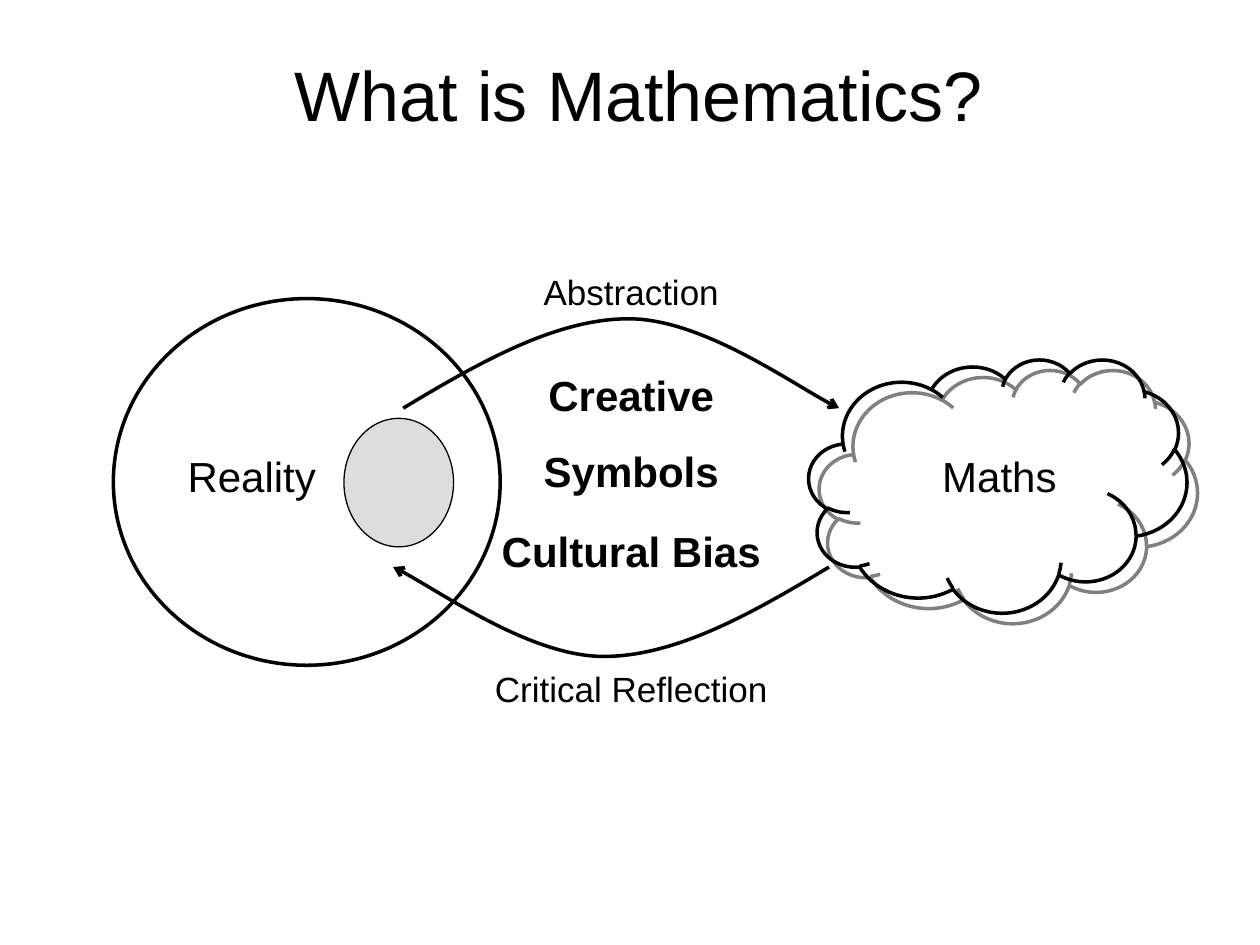
"""Build the slide that links reality and maths by abstraction and reflection."""
from lxml import etree
from pptx import Presentation
from pptx.dml.color import RGBColor
from pptx.enum.shapes import MSO_SHAPE
from pptx.enum.text import PP_ALIGN
from pptx.oxml.ns import qn
from pptx.util import Inches, Pt

OVAL, CLOUD = MSO_SHAPE.OVAL, MSO_SHAPE.CLOUD
LEFT, CENTER = PP_ALIGN.LEFT, PP_ALIGN.CENTER
BLACK = RGBColor(0x00, 0x00, 0x00)
LIGHT_GREY = RGBColor(0xDD, 0xDD, 0xDD)
SHADOW_GREY = RGBColor(0x80, 0x80, 0x80)

COLUMNS, ROWS = 100, 75
CELL = Inches(0.1)
LABEL_COLUMN, LABEL_WIDTH = 32.75, 34.7
ARC = [(0, 7.1), (6, 3.5), (12.1, 0), (17.9, 0), (23.6, 0), (31.8, 5.8), (34.6, 7.1)]


def cells(*counts):
    """Turn counts of grid cells into lengths."""
    return [round(count * CELL) for count in counts]


def add_label(page, column, row, width, height, text, size, align=LEFT, bold=False):
    """Place one line of text on the grid."""
    box = page.shapes.add_textbox(*cells(column, row, width, height))
    box.text_frame.word_wrap = True
    para = box.text_frame.paragraphs[0]
    para.text = text
    para.alignment = align
    para.font.name = "Arial"
    para.font.size = Pt(size)
    para.font.bold = bold
    para.font.color.rgb = BLACK


def style_outline(shape, weight, fill=None):
    """Give a shape a black line and an optional fill."""
    shape.shadow.inherit = False
    shape.line.color.rgb = BLACK
    shape.line.width = Pt(weight)
    if fill is None:
        shape.fill.background()
    else:
        shape.fill.solid()
        shape.fill.fore_color.rgb = fill


def add_outline(page, kind, column, row, width, height, weight, fill=None):
    """Place an outlined preset shape on the grid."""
    shape = page.shapes.add_shape(kind, *cells(column, row, width, height))
    style_outline(shape, weight, fill)
    return shape


def add_shadow(shape, color, distance, degrees):
    """Cast a sharp shadow from a shape."""
    effects = shape._element.spPr.find(qn("a:effectLst"))
    shadow = etree.SubElement(
        effects, qn("a:outerShdw"), dist=str(Pt(distance)),
        dir=str(degrees * 60000), algn="ctr", rotWithShape="0")
    etree.SubElement(shadow, qn("a:srgbClr"), val=str(color))


def add_curved_arrow(page, column, row, rotation=0):
    """Draw the arc as Bezier curves with an arrowhead at its end."""
    points = [tuple(cells(column + x, row + y)) for x, y in ARC]
    builder = page.shapes.build_freeform(*points[0])
    builder.add_line_segments(points[1:], close=False)
    arrow = builder.convert_to_shape()
    style_outline(arrow, 2)
    arrow.rotation = rotation
    outline = next(arrow._element.iter(qn("a:path")))
    segments = outline.findall(qn("a:lnTo"))
    for start in range(0, len(segments), 3):
        curve = etree.SubElement(outline, qn("a:cubicBezTo"))
        for segment in segments[start:start + 3]:
            curve.append(segment[0])
            outline.remove(segment)
    etree.SubElement(arrow.line._get_or_add_ln(), qn("a:tailEnd"), type="arrow")


def main():
    """Build and save the slide."""
    deck = Presentation()
    deck.slide_width, deck.slide_height = cells(COLUMNS, ROWS)
    page = deck.slides.add_slide(deck.slide_layouts[6])

    add_label(page, 22.4, 3.6, 56.7, 7.7, "What is Mathematics?", 40)

    cloud = add_outline(page, CLOUD, 64.2, 28.5, 30, 20.1, 2)
    add_shadow(cloud, SHADOW_GREY, 8.5, 45)
    add_outline(page, OVAL, 27.3, 33.2, 8.7, 10.2, 0.75, LIGHT_GREY)
    add_outline(page, OVAL, 9, 23.7, 30.7, 29.1, 2)
    for column, text in ((13.9, "Reality"), (73.8, "Maths")):
        add_label(page, column, 35.3, 12.6, 5, text, 24)

    add_curved_arrow(page, 32, 25.3)
    add_curved_arrow(page, 31.2, 45, rotation=180)
    for row, text in ((21, "Abstraction"), (52.5, "Critical Reflection")):
        add_label(page, LABEL_COLUMN, row, LABEL_WIDTH, 4.3, text, 20, CENTER)
    for row, text in ((28.8, "Creative"), (34.9, "Symbols"), (41.2, "Cultural Bias")):
        add_label(page, LABEL_COLUMN, row, LABEL_WIDTH, 5, text, 24, CENTER, bold=True)

    deck.save("out.pptx")


if __name__ == "__main__":
    main()
